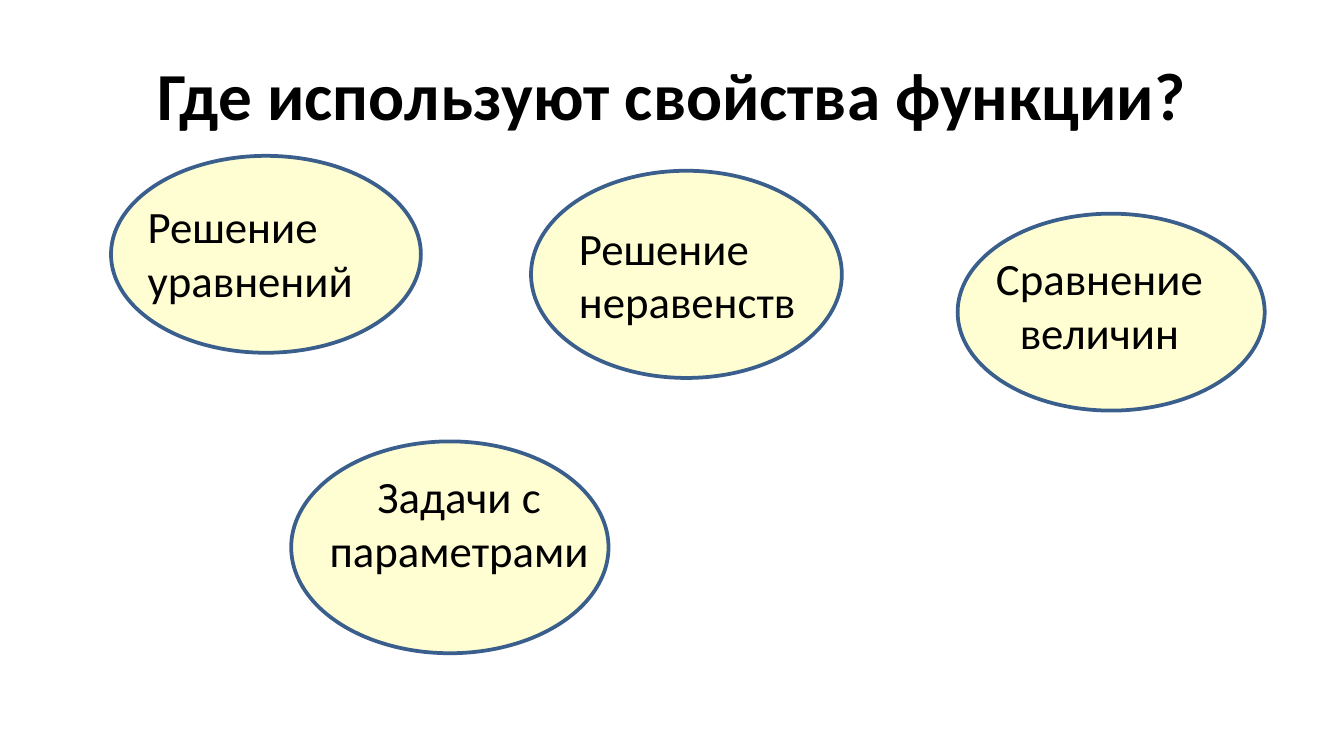
"""Build the slide on where the properties of a function are used."""
from dataclasses import dataclass

from pptx import Presentation
from pptx.dml.color import RGBColor
from pptx.enum.shapes import MSO_SHAPE
from pptx.enum.text import MSO_ANCHOR as Anchor, PP_ALIGN as Align
from pptx.util import Pt


@dataclass(frozen=True)
class Theme:
    font: str = "Calibri"
    ink: RGBColor = RGBColor(0x00, 0x00, 0x00)
    cream: RGBColor = RGBColor(0xFF, 0xFE, 0xD2)
    outline: RGBColor = RGBColor(0x3A, 0x5F, 0x8C)
    title_size: int = 36
    label_size: int = 24
    outline_width: int = 2


theme = Theme()


def add_text(slide, text, bounds, size, align, anchor=Anchor.TOP, bold=False):
    frame = slide.shapes.add_textbox(*map(Pt, bounds)).text_frame
    frame.word_wrap = True
    frame.vertical_anchor = anchor
    frame.text = text
    paragraph = frame.paragraphs[0]
    paragraph.alignment = align
    font = paragraph.runs[0].font
    font.name = theme.font
    font.size = Pt(size)
    font.bold = bold
    font.color.rgb = theme.ink


deck = Presentation()
deck.slide_width, deck.slide_height = Pt(720), Pt(405)
slide = deck.slides.add_slide(deck.slide_layouts[6])

add_text(slide, "Где используют свойства функции?", (36, 16.5, 648, 67.5),
         theme.title_size, Align.CENTER, Anchor.MIDDLE, bold=True)

uses = [
    ("Решение уравнений", (59.5, 83.5, 166, 105.5), (72, 103, 135.5, 65.5), Align.LEFT),
    ("Решение неравенств", (284.5, 91.5, 166.5, 111), (303, 114.5, 146, 65.5), Align.LEFT),
    ("Сравнение величин", (513, 114.5, 164.5, 105.5), (524, 131, 130, 65.5), Align.CENTER),
    ("Задачи с параметрами", (156, 236.5, 170, 113.5), (167, 247.5, 158, 65.5), Align.CENTER),
]

for use, oval_bounds, label_bounds, align in uses:
    oval = slide.shapes.add_shape(MSO_SHAPE.OVAL, *map(Pt, oval_bounds))
    oval.shadow.inherit = False
    oval.fill.solid()
    oval.fill.fore_color.rgb = theme.cream
    oval.line.color.rgb = theme.outline
    oval.line.width = Pt(theme.outline_width)
    add_text(slide, use, label_bounds, theme.label_size, align)

deck.save("out.pptx")
